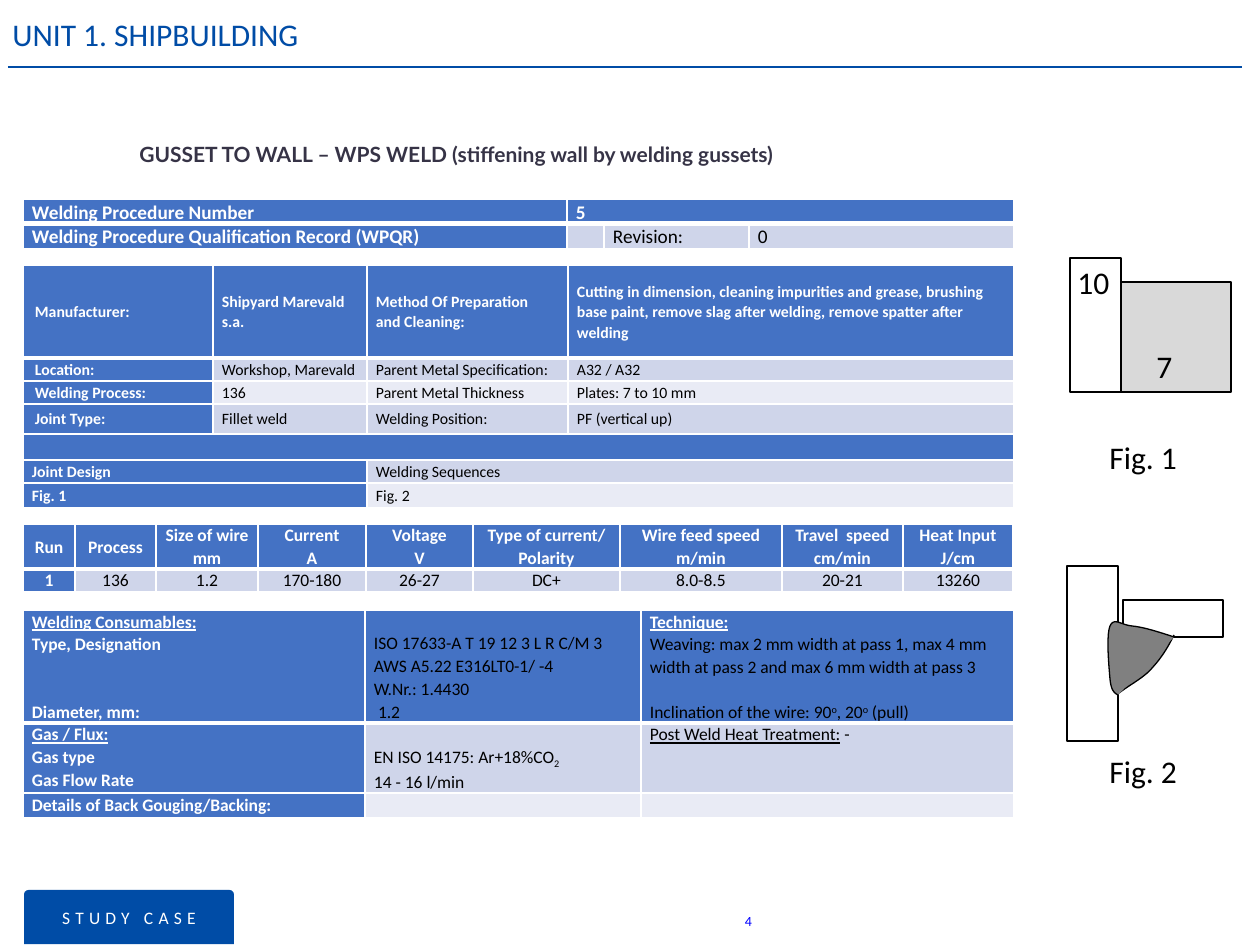
from dataclasses import dataclass

from lxml import etree
from pptx import Presentation
from pptx.dml.color import RGBColor
from pptx.enum.shapes import MSO_CONNECTOR, MSO_SHAPE
from pptx.enum.text import MSO_ANCHOR, PP_ALIGN
from pptx.oxml.ns import qn
from pptx.util import Pt

PX = 914400 / 126
NAVY = RGBColor(0x00, 0x4C, 0xA6)
BLUE = RGBColor(0x44, 0x72, 0xC4)
BANDS = (RGBColor(0xE9, 0xEB, 0xF5), RGBColor(0xCF, 0xD5, 0xEA))
INK = RGBColor(0x36, 0x33, 0x46)
BLACK = RGBColor(0, 0, 0)
WHITE = RGBColor(255, 255, 255)
LINK_BLUE = RGBColor(0, 0, 255)
PALE_GRAY = RGBColor(0xD9, 0xD9, 0xD9)
GRAY = RGBColor(0x80, 0x80, 0x80)
TOP, MIDDLE = MSO_ANCHOR.TOP, MSO_ANCHOR.MIDDLE
LEFT, CENTER = PP_ALIGN.LEFT, PP_ALIGN.CENTER
RECTANGLE, TAB = MSO_SHAPE.RECTANGLE, MSO_SHAPE.ROUND_2_SAME_RECTANGLE
STRAIGHT = MSO_CONNECTOR.STRAIGHT
UNDERLINE, SUPER, SUB = "underline", "30000", "-25000"
LINE_SPACING, LINE_POINTS, LINE_PX = 1.07, 13, 22


@dataclass
class Line:
    """A table paragraph: runs are strings or (text, effect) pairs."""
    runs: tuple
    lines_before: int = 0
    indent: int = 0
    header: bool | None = None


def emu(*lengths):
    return [round(length * PX) for length in lengths]


def style_font(font, size, color, bold=False, name="Calibri"):
    font.size, font.bold, font.name = Pt(size), bold, name
    font.color.rgb = color


def add_text(slide, box, text, size, color, bold=False, name="Calibri",
             anchor=TOP, wrap=True, inset=None):
    frame = slide.shapes.add_textbox(*emu(*box)).text_frame
    frame.word_wrap, frame.vertical_anchor = wrap, anchor
    if inset is not None:
        frame.margin_left = frame.margin_right = inset
        frame.margin_top = frame.margin_bottom = inset
    paragraph = frame.paragraphs[0]
    paragraph.text = text
    style_font(paragraph.font, size, color, bold, name)
    return paragraph


def outline(shape, fill):
    shape.shadow.inherit = False
    shape.fill.solid()
    shape.fill.fore_color.rgb = fill
    shape.line.color.rgb = BLACK
    shape.line.width = Pt(0.75)


def add_plate(slide, box, fill=WHITE):
    outline(slide.shapes.add_shape(RECTANGLE, *emu(*box)), fill)


def bezier(points, steps=10):
    """Sample a chain of cubic curves that share their end points."""
    samples = [points[0]]
    for start in range(0, len(points) - 1, 3):
        for step in range(1, steps + 1):
            t = step / steps
            weights = ((1 - t) ** 3, 3 * t * (1 - t) ** 2, 3 * t * t * (1 - t), t ** 3)
            samples.append(tuple(
                sum(w * p[axis] for w, p in zip(weights, points[start:start + 4]))
                for axis in (0, 1)))
    return samples


def add_curve(slide, left, top, points):
    samples = [tuple(emu(left + x, top + y)) for x, y in bezier(points)]
    builder = slide.shapes.build_freeform(*samples[0])
    builder.add_line_segments(samples[1:], close=False)
    outline(builder.convert_to_shape(), GRAY)


def set_borders(cell, bottom):
    properties = cell._tc.get_or_add_tcPr()
    for index, side in enumerate(("lnL", "lnR", "lnT", "lnB")):
        width = bottom if side == "lnB" else 1
        line = etree.Element(qn(f"a:{side}"), w=str(Pt(width)))
        fill = etree.SubElement(line, qn("a:solidFill"))
        etree.SubElement(fill, qn("a:srgbClr"), val=str(WHITE))
        properties.insert(index, line)


def fill_cell(cell, content, size, header, anchor, align):
    cell.margin_left = cell.margin_right = emu(9)[0]
    cell.margin_top = cell.margin_bottom = 0
    cell.vertical_anchor = anchor
    lines = content if isinstance(content, list) else content.split("\n")
    for index, line in enumerate(lines):
        if isinstance(line, str):
            line = Line((line,))
        frame = cell.text_frame
        paragraph = frame.add_paragraph() if index else frame.paragraphs[0]
        if index and line.lines_before:
            paragraph.space_before = Pt(LINE_POINTS * line.lines_before)
        elif line.lines_before:
            cell.margin_top = emu(LINE_PX * line.lines_before)[0]
        if line.indent:
            paragraph._p.get_or_add_pPr().set("marL", str(emu(line.indent)[0]))
        paragraph.alignment, paragraph.line_spacing = align, LINE_SPACING
        strong = header if line.header is None else line.header
        style_font(paragraph.font, size, WHITE if strong else BLACK, strong)
        for part in line.runs:
            text, effect = (part, None) if isinstance(part, str) else part
            if not text:
                paragraph._p.get_or_add_endParaRPr().set("sz", str(size * 100))
                continue
            run = paragraph.add_run()
            run.text = text
            if effect == UNDERLINE:
                run.font.underline = True
            elif effect:
                run._r.get_or_add_rPr().set("baseline", effect)


def add_grid(slide, left, top, widths, heights, rows, size, anchor=MIDDLE, align=LEFT):
    """Table with a blue first row and column; None joins the cell to its left."""
    table = slide.shapes.add_table(len(rows), len(widths), *emu(
        left, top, sum(widths), sum(heights))).table
    for column, width in zip(table.columns, widths):
        column.width = emu(width)[0]
    for row, height in zip(table.rows, heights):
        row.height = emu(height)[0]
    for r, contents in enumerate(rows):
        origin = 0
        for c, content in enumerate(contents):
            cell = table.cell(r, c)
            if content is not None:
                origin = c
            header = r == 0 or origin == 0
            cell.fill.solid()
            cell.fill.fore_color.rgb = BLUE if header else BANDS[r % 2]
            set_borders(cell, 1 if r else 3)
            if content is not None:
                fill_cell(cell, content, size, header, anchor, align)
            if content is None and (c + 1 == len(contents) or contents[c + 1] is not None):
                table.cell(r, origin).merge(cell)


def add_header(slide, left, top):
    rule = slide.shapes.add_connector(
        STRAIGHT, *emu(left + 8, top + 67, left + 1242, top + 67))
    rule.line.color.rgb, rule.line.width = NAVY, Pt(1.5)
    etree.SubElement(rule._element.spPr, qn("a:effectLst"))
    title = add_text(slide, (left, top + 9, 505, 55), "UNIT 1. SHIPBUILDING", 18, NAVY,
                     anchor=MIDDLE)
    title.line_spacing = 0.9
    add_text(slide, (left + 127, top + 135, 887, 38),
             "GUSSET TO WALL – WPS WELD (stiffening wall by welding gussets)",
             12, INK, True, "Lato")


def add_procedure_tables(slide, left, top):
    add_grid(slide, left, top, (544, 37, 145, 265), (24, 24), [
        ["Welding Procedure Number", "5", None, None],
        ["Welding Procedure Qualification Record (WPQR)", "", "Revision:", "0"],
    ], 11)

    def label(text):
        return [Line((text,), indent=3)]

    add_grid(slide, left, top + 66, (190, 154, 201, 446), (93, 23, 23, 30, 26, 23, 25), [
        [label("Manufacturer:"), "Shipyard Marevald s.a.",
         "Method Of Preparation\nand Cleaning:",
         "Cutting in dimension, cleaning impurities and grease, brushing base paint, "
         "remove slag after welding, remove spatter after welding"],
        [label("Location:"), "Workshop, Marevald", "Parent Metal Specification:", "A32 / A32"],
        [label("Welding Process:"), "136", "Parent Metal Thickness", "Plates: 7 to 10 mm"],
        [label("Joint Type:"), "Fillet weld", "Welding Position:", "PF (vertical up)"],
        ["", None, None, None],
        ["Joint Design", None, "Welding Sequences", None],
        ["Fig. 1", None, "Fig. 2", None],
    ], 9)
    add_grid(slide, left, top + 325, (52, 81, 102, 108, 107, 147, 162, 121, 110), (45, 22), [
        ["Run", "Process", "Size of wire\nmm", "Current\nA", "Voltage\nV",
         "Type of current/\nPolarity", "Wire feed speed\nm/min", "Travel  speed\ncm/min",
         "Heat Input\nJ/cm"],
        ["1", "136", "1.2", "170-180", "26-27", "DC+", "8.0-8.5", "20-21", "13260"],
    ], 10, align=CENTER)
    add_grid(slide, left, top + 411, (342, 276, 373), (112, 70, 25), [
        [[Line((("Welding Consumables:", UNDERLINE),)), "Type, Designation",
          Line(("Diameter, mm:",), lines_before=2)],
         [Line(("ISO 17633-A T 19 12 3 L R C/M 3",), lines_before=1, header=False),
          Line(("AWS A5.22 E316LT0-1/ -4",), header=False),
          Line(("W.Nr.: 1.4430",), header=False),
          Line(("1.2",), indent=4, header=False)],
         [Line((("Technique:", UNDERLINE),)),
          Line(("Weaving: max 2 mm width at pass 1, max 4 mm width at pass 2 "
                "and max 6 mm width at pass 3",), header=False),
          Line(("Inclination of the wire: 90", ("o", SUPER), ", 20", ("o", SUPER), " (pull)"),
               lines_before=1, header=False)]],
        [[Line((("Gas / Flux:", UNDERLINE),)), "Gas type", "Gas Flow Rate"],
         [Line(("EN ISO 14175: Ar+18%CO", ("2", SUB)), lines_before=1), "14 - 16 l/min"],
         [Line((("Post Weld Heat Treatment:", UNDERLINE), " -"))]],
        ["Details of Back Gouging/Backing:", "", ""],
    ], 10, anchor=TOP)


def add_label(slide, box, text):
    add_text(slide, box, text, 18, BLACK, wrap=False)


def add_joint_design(slide, left, top):
    add_plate(slide, (left, top, 51, 134))
    add_plate(slide, (left + 51, top + 24, 110, 110), PALE_GRAY)
    add_label(slide, (left + 74, top + 83, 42, 50), "7")
    add_label(slide, (left - 5, top - 1, 58, 50), "10")
    add_label(slide, (left + 27, top + 174, 93, 50), "Fig. 1")


def add_welding_sequence(slide, left, top):
    add_plate(slide, (left + 56, top + 34, 100, 37))
    add_plate(slide, (left, top, 51, 175))
    add_curve(slide, left, top, [
        (107, 69), (102, 79), (96, 90), (86, 101), (78, 111), (64, 118), (52, 127)])
    add_curve(slide, left, top, [
        (107, 71), (92, 66), (76, 61), (65, 60), (54, 59), (47, 51), (43, 60),
        (39, 69), (42, 102), (43, 113), (44, 124), (47, 127), (51, 129)])
    add_label(slide, (left + 30, top + 180, 93, 50), "Fig. 2")


def add_footer(slide, left, top):
    badge = slide.shapes.add_shape(TAB, *emu(left, top, 210, 54))
    badge.adjustments[0], badge.adjustments[1] = 0.08, 0
    badge.shadow.inherit = False
    badge.fill.solid()
    badge.fill.fore_color.rgb = NAVY
    badge.line.fill.background()
    badge.text_frame.vertical_anchor = MIDDLE
    paragraph = badge.text_frame.paragraphs[0]
    paragraph.text, paragraph.alignment = "STUDY CASE", CENTER
    style_font(paragraph.font, 10, WHITE)
    paragraph.runs[0]._r.get_or_add_rPr().set("spc", "300")
    number = add_text(slide, (left + 721, top + 21, 8, 25), "4", 8, LINK_BLUE,
                      wrap=False, inset=0)
    number.line_spacing = LINE_SPACING


def main():
    presentation = Presentation()
    presentation.slide_width, presentation.slide_height = emu(1260, 945)
    slide = presentation.slides.add_slide(presentation.slide_layouts[6])
    add_header(slide, 0, 0)
    add_procedure_tables(slide, 23, 199)
    add_joint_design(slide, 1070, 258)
    add_welding_sequence(slide, 1067, 566)
    add_footer(slide, 24, 890)
    presentation.save("out.pptx")


if __name__ == "__main__":
    main()
